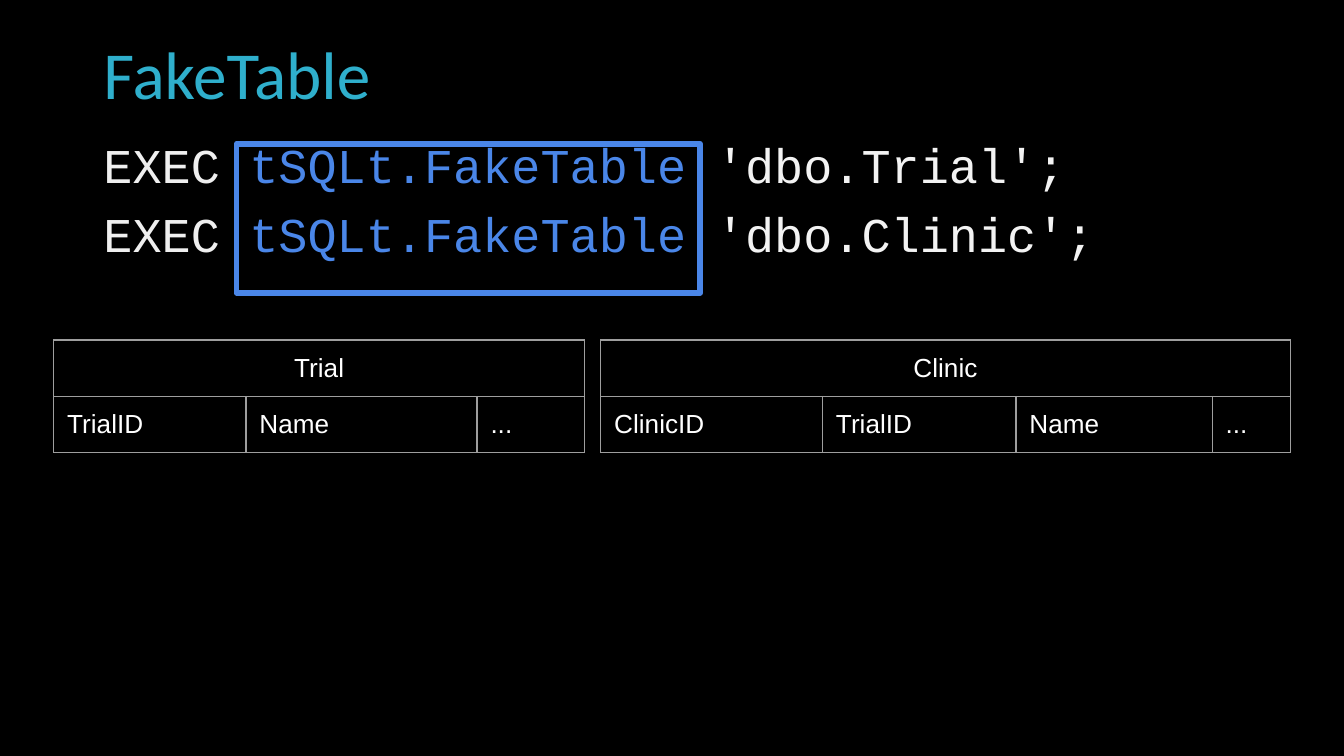
import pptx
import pptx.dml.color
import pptx.enum.shapes
import pptx.enum.text
import pptx.oxml
import pptx.oxml.ns
import pptx.util
from pptx.util import Inches

# Content
TITLE = "FakeTable"
CALLS = [("EXEC ", "tSQLt.FakeTable", " 'dbo.Trial';"),
         ("EXEC ", "tSQLt.FakeTable", " 'dbo.Clinic';")]
TABLES = [
    {"name": "Trial", "left": 0.4,
     "columns": [("TrialID", 1.43), ("Name", 1.72), ("...", 0.8)]},
    {"name": "Clinic", "left": 4.47,
     "columns": [("ClinicID", 1.65), ("TrialID", 1.44), ("Name", 1.46), ("...", 0.58)]},
]
SLIDE_WIDTH = 10
SLIDE_HEIGHT = SLIDE_WIDTH * 9 / 16
TABLE_TOP, ROW_HEIGHT, CELL_MARGIN = 2.53, 0.42, 0.1

THEME = {
    "background": "000000", "title": "2FAFCC", "accent": "4A86E8",
    "code": ("EFEFEF", "4A86E8", "F3F3F3"), "cell": "FFFFFF", "border": "9E9E9E",
    "title_font": "Calibri", "code_font": "Courier New", "cell_font": "Arial",
    "title_size": 36, "code_size": 26, "cell_size": 14,
    "frame_width": 3, "border_width": 0.75,
}
ALIGN = pptx.enum.text.PP_ALIGN
ANCHOR = pptx.enum.text.MSO_ANCHOR


def color(value):
    return pptx.dml.color.RGBColor.from_string(value)


def style(font, role, value):
    font.name = THEME[role + "_font"]
    font.size = pptx.util.Pt(THEME[role + "_size"])
    font.color.rgb = color(value)


def place(holder, left, top, width, height, anchor):
    holder.left, holder.top = Inches(left), Inches(top)
    holder.width, holder.height = Inches(width), Inches(height)
    frame = holder.text_frame
    frame.word_wrap = True
    frame.auto_size = pptx.enum.text.MSO_AUTO_SIZE.NONE
    frame.vertical_anchor = anchor
    frame.margin_left = frame.margin_right = Inches(0.08)
    frame.margin_top = frame.margin_bottom = Inches(0.04)
    return frame


def add_border(cell):
    properties = cell._tc.get_or_add_tcPr()
    for index, side in enumerate(("lnL", "lnR", "lnT", "lnB")):
        properties.insert(index, pptx.oxml.parse_xml(
            f'<a:{side} {pptx.oxml.ns.nsdecls("a")} w="{pptx.util.Pt(THEME["border_width"])}">'
            f'<a:solidFill><a:srgbClr val="{THEME["border"]}"/></a:solidFill></a:{side}>'))


def fill_cell(cell, text, align):
    cell.fill.background()
    add_border(cell)
    cell.margin_left = cell.margin_right = Inches(CELL_MARGIN)
    cell.margin_top = cell.margin_bottom = Inches(CELL_MARGIN)
    para = cell.text_frame.paragraphs[0]
    para.text = text
    para.alignment = align
    style(para.font, "cell", THEME["cell"])
    for span in para.runs:
        style(span.font, "cell", THEME["cell"])


def add_schema(page, schema):
    columns = schema["columns"]
    width = sum(size for _, size in columns)
    table = page.shapes.add_table(
        2, len(columns), Inches(schema["left"]), Inches(TABLE_TOP),
        Inches(width), Inches(2 * ROW_HEIGHT)).table
    table.first_row = table.horz_banding = False
    for row in table.rows:
        row.height = Inches(ROW_HEIGHT)
    for index, (label, size) in enumerate(columns):
        table.columns[index].width = Inches(size)
        fill_cell(table.cell(0, index), "" if index else schema["name"], ALIGN.CENTER)
        fill_cell(table.cell(1, index), label, ALIGN.LEFT)
    table.cell(0, 0).merge(table.cell(0, len(columns) - 1))


def main():
    deck = pptx.Presentation()
    deck.slide_width, deck.slide_height = Inches(SLIDE_WIDTH), Inches(SLIDE_HEIGHT)
    page = deck.slides.add_slide(deck.slide_layouts[1])
    page.background.fill.solid()
    page.background.fill.fore_color.rgb = color(THEME["background"])

    # Title
    frame = place(page.shapes.title, 0.69, 0.27, 9.04, 0.62, ANCHOR.MIDDLE)
    frame.text = TITLE
    para = frame.paragraphs[0]
    para.alignment, para.line_spacing = ALIGN.LEFT, 0.9
    style(para.runs[0].font, "title", THEME["title"])

    # Code lines
    frame = place(page.placeholders[1], 0.69, 1.01, 8.62, 3.86, ANCHOR.TOP)
    for index, call in enumerate(CALLS):
        para = frame.add_paragraph() if index else frame.paragraphs[0]
        para.line_spacing = 0.9
        para.space_before = pptx.util.Pt(9 if index else 0)
        properties = para._p.get_or_add_pPr()
        properties.set("marL", "0")
        properties.set("indent", "0")
        properties.append(pptx.oxml.parse_xml(f'<a:buNone {pptx.oxml.ns.nsdecls("a")}/>'))
        for text, value in zip(call, THEME["code"]):
            span = para.add_run()
            span.text = text
            style(span.font, "code", value)

    # Frame around the procedure name
    box = page.shapes.add_shape(pptx.enum.shapes.MSO_SHAPE.RECTANGLE,
                                Inches(1.76), Inches(1.07), Inches(3.45), Inches(1.11))
    box.shadow.inherit = False
    box.fill.background()
    box.line.color.rgb = color(THEME["accent"])
    box.line.width = pptx.util.Pt(THEME["frame_width"])
    box.line._get_or_add_ln().append(
        pptx.oxml.parse_xml(f'<a:round {pptx.oxml.ns.nsdecls("a")}/>'))

    # Table schemas
    for schema in TABLES:
        add_schema(page, schema)

    deck.save("out.pptx")


if __name__ == "__main__":
    main()
